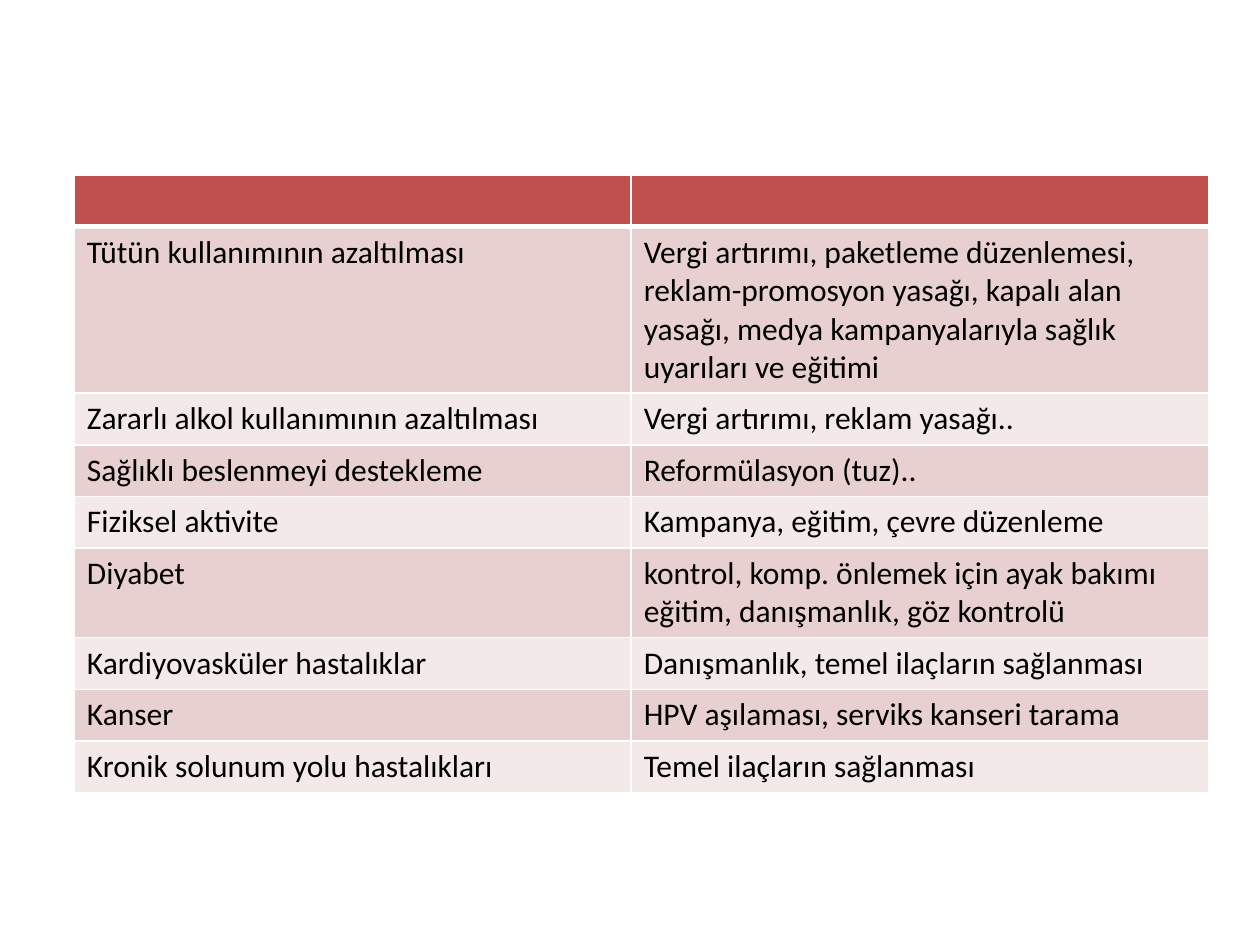
from typing import NamedTuple

from lxml import etree
from pptx import Presentation
from pptx.dml.color import RGBColor
from pptx.oxml.ns import qn
from pptx.util import Inches, Pt

HEADER_FILL = "C0504D"
BAND_FILLS = ("E8D0D0", "F4E9E9")
BORDER = "FFFFFF"
COLUMN_WIDTHS = (4.42, 4.58)
ROW_HEIGHT = 0.41


class Measure(NamedTuple):
    target: str
    action: str


MEASURES = [
    Measure("Tütün kullanımının azaltılması",
            "Vergi artırımı, paketleme düzenlemesi, reklam-promosyon yasağı, "
            "kapalı alan yasağı, medya kampanyalarıyla sağlık uyarıları ve eğitimi"),
    Measure("Zararlı alkol kullanımının azaltılması", "Vergi artırımı, reklam yasağı.."),
    Measure("Sağlıklı beslenmeyi destekleme", "Reformülasyon (tuz).."),
    Measure("Fiziksel aktivite", "Kampanya, eğitim, çevre düzenleme"),
    Measure("Diyabet",
            "kontrol, komp. önlemek için ayak bakımı eğitim, danışmanlık, göz kontrolü"),
    Measure("Kardiyovasküler hastalıklar", "Danışmanlık, temel ilaçların sağlanması"),
    Measure("Kanser", "HPV aşılaması, serviks kanseri tarama"),
    Measure("Kronik solunum yolu hastalıkları", "Temel ilaçların sağlanması"),
]


def rgb(color: str) -> RGBColor:
    return RGBColor.from_string(color)


def write(tf, text: str, *, size: float = 18, font: str = "Calibri",
          color: str = "000000") -> None:
    r = tf.paragraphs[0].add_run()
    r.text = text
    r.font.size = Pt(size)
    r.font.name = font
    r.font.color.rgb = rgb(color)


def set_borders(cell, *, top: float = 1, bottom: float = 1) -> None:
    tc_pr = cell._tc.get_or_add_tcPr()
    for side, width in (("L", 1), ("R", 1), ("T", top), ("B", bottom)):
        ln = etree.SubElement(tc_pr, qn(f"a:ln{side}"), w=str(Pt(width)))
        fill = etree.SubElement(ln, qn("a:solidFill"))
        etree.SubElement(fill, qn("a:srgbClr"), val=BORDER)


def set_fill(cell, color: str) -> None:
    cell.fill.solid()
    cell.fill.fore_color.rgb = rgb(color)


def add_measures(s, measures: list[Measure], left: float, top: float) -> None:
    rows = len(measures) + 1
    frame = s.shapes.add_table(rows, len(COLUMN_WIDTHS), Inches(left), Inches(top),
                               Inches(sum(COLUMN_WIDTHS)), Inches(rows * ROW_HEIGHT))
    table = frame.table
    table.first_row = False
    table.horz_banding = False
    for column, width in zip(table.columns, COLUMN_WIDTHS):
        column.width = Inches(width)
    for row in table.rows:
        row.height = Inches(ROW_HEIGHT)
    for cell in table.rows[0].cells:
        set_borders(cell, bottom=3)
        set_fill(cell, HEADER_FILL)
    for i, measure in enumerate(measures):
        for cell, text in zip(table.rows[i + 1].cells, measure):
            set_borders(cell, top=3 if i == 0 else 1)
            set_fill(cell, BAND_FILLS[i % 2])
            write(cell.text_frame, text)


def main() -> None:
    prs = Presentation()
    prs.slide_width, prs.slide_height = Inches(10), Inches(7.5)
    s = prs.slides.add_slide(prs.slide_layouts[6])
    add_measures(s, MEASURES, 0.59, 1.39)
    prs.save("out.pptx")


if __name__ == "__main__":
    main()
